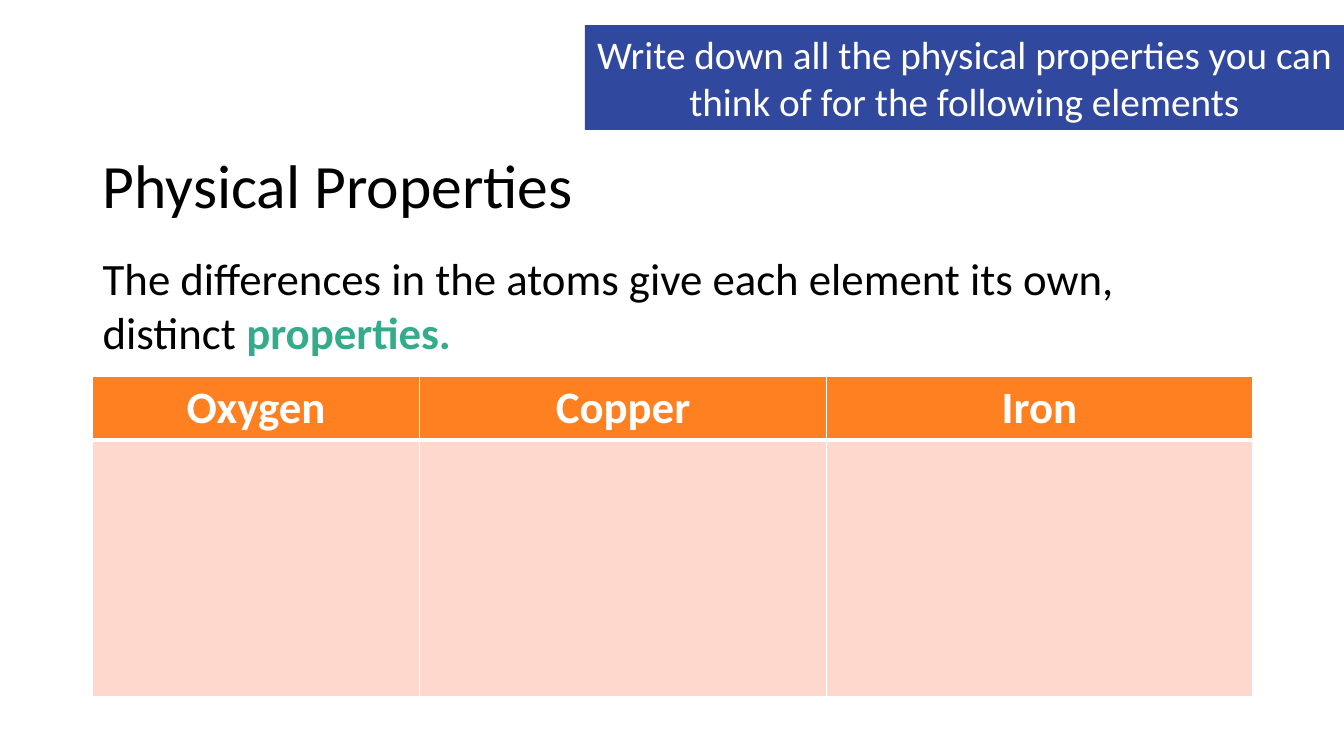
from dataclasses import dataclass

from lxml import etree
from pptx import Presentation, util as u
from pptx.dml.color import RGBColor
from pptx.enum import shapes, text
from pptx.oxml.ns import qn


@dataclass(frozen=True)
class Theme:
    face: str = "Calibri"
    ink: str = "000000"
    white: str = "FFFFFF"
    blue: str = "31489F"
    green: str = "34AC8B"
    orange: str = "FF8021"
    pink: str = "FFD8CD"
    title: int = 44
    body: int = 32
    task: int = 28


class Deck:
    def __init__(self, theme):
        self.theme = theme
        self.prs = Presentation()
        self.prs.slide_width = u.Inches(13.33)
        self.prs.slide_height = u.Inches(7.5)
        self.slide = self.prs.slides.add_slide(self.prs.slide_layouts[6])

    def style(self, font, size, color, bold=False):
        font.name = self.theme.face
        font.size = u.Pt(size)
        font.bold = bold
        font.color.rgb = RGBColor.from_string(color)

    def paint(self, fill, color):
        fill.solid()
        fill.fore_color.rgb = RGBColor.from_string(color)

    def label(self, box, words, size, accent=""):
        """Add a text box whose closing accent words are bold and green."""
        frame = self.slide.shapes.add_textbox(*map(u.Inches, box)).text_frame
        frame.word_wrap = True
        para = frame.paragraphs[0]
        para.add_run().text = words
        self.style(para.font, size, self.theme.ink)
        if accent:
            run = para.add_run()
            run.text = accent
            self.style(run.font, size, self.theme.green, bold=True)
        return frame

    def banner(self, box, words):
        rect = self.slide.shapes.add_shape(
            shapes.MSO_SHAPE.RECTANGLE, *map(u.Inches, box))
        rect.shadow.inherit = False
        rect.line.fill.background()
        self.paint(rect.fill, self.theme.blue)
        frame = rect.text_frame
        frame.word_wrap = True
        para = frame.paragraphs[0]
        para.text = words
        para.alignment = text.PP_ALIGN.CENTER
        self.style(para.font, self.theme.task, self.theme.white)

    def edge(self, cell, side, width):
        props = cell._tc.get_or_add_tcPr()
        line = etree.SubElement(props, qn(f"a:ln{side}"), w=str(u.Pt(width)))
        fill = etree.SubElement(line, qn("a:solidFill"))
        etree.SubElement(fill, qn("a:srgbClr"), val=self.theme.white)

    def table(self, box, heads, widths, heights):
        """Add a table with a header row above one row of empty cells."""
        grid = self.slide.shapes.add_table(
            len(heights), len(heads), *map(u.Inches, box)).table
        for row, high in zip(grid.rows, heights):
            row.height = u.Inches(high)
        for col, wide in zip(grid.columns, widths):
            col.width = u.Inches(wide)
        for r in range(len(heights)):
            for c, head in enumerate(heads):
                cell = grid.cell(r, c)
                rule = {"L": 1, "R": 1, "T": 1 if r == 0 else 3,
                        "B": 3 if r == 0 else 1}
                for side, width in rule.items():
                    self.edge(cell, side, width)
                self.paint(cell.fill, self.theme.pink if r else self.theme.orange)
                if r == 0:
                    para = cell.text_frame.paragraphs[0]
                    para.text = head
                    para.alignment = text.PP_ALIGN.CENTER
                    self.style(para.font, self.theme.body, self.theme.white, bold=True)


def main():
    theme = Theme()
    deck = Deck(theme)
    left, wide = 0.92, 11.5
    title = deck.label((left, 1.43, wide, 0.89), "Physical Properties", theme.title)
    title.vertical_anchor = text.MSO_ANCHOR.MIDDLE
    title.paragraphs[0].line_spacing = 0.9
    deck.table((left, 3.73, wide, 3.18), ("Oxygen", "Copper", "Iron"),
               (3.24, 4.04, 4.22), (0.63, 2.55))
    deck.banner((5.8, 0.25, 7.53, 1.04),
                "Write down all the physical properties you can think of "
                "for the following elements")
    deck.label((left, 2.44, wide, 1.18),
               "The differences in the atoms give each element its own, distinct ",
               theme.body, "properties.")
    deck.prs.save("out.pptx")


if __name__ == "__main__":
    main()
